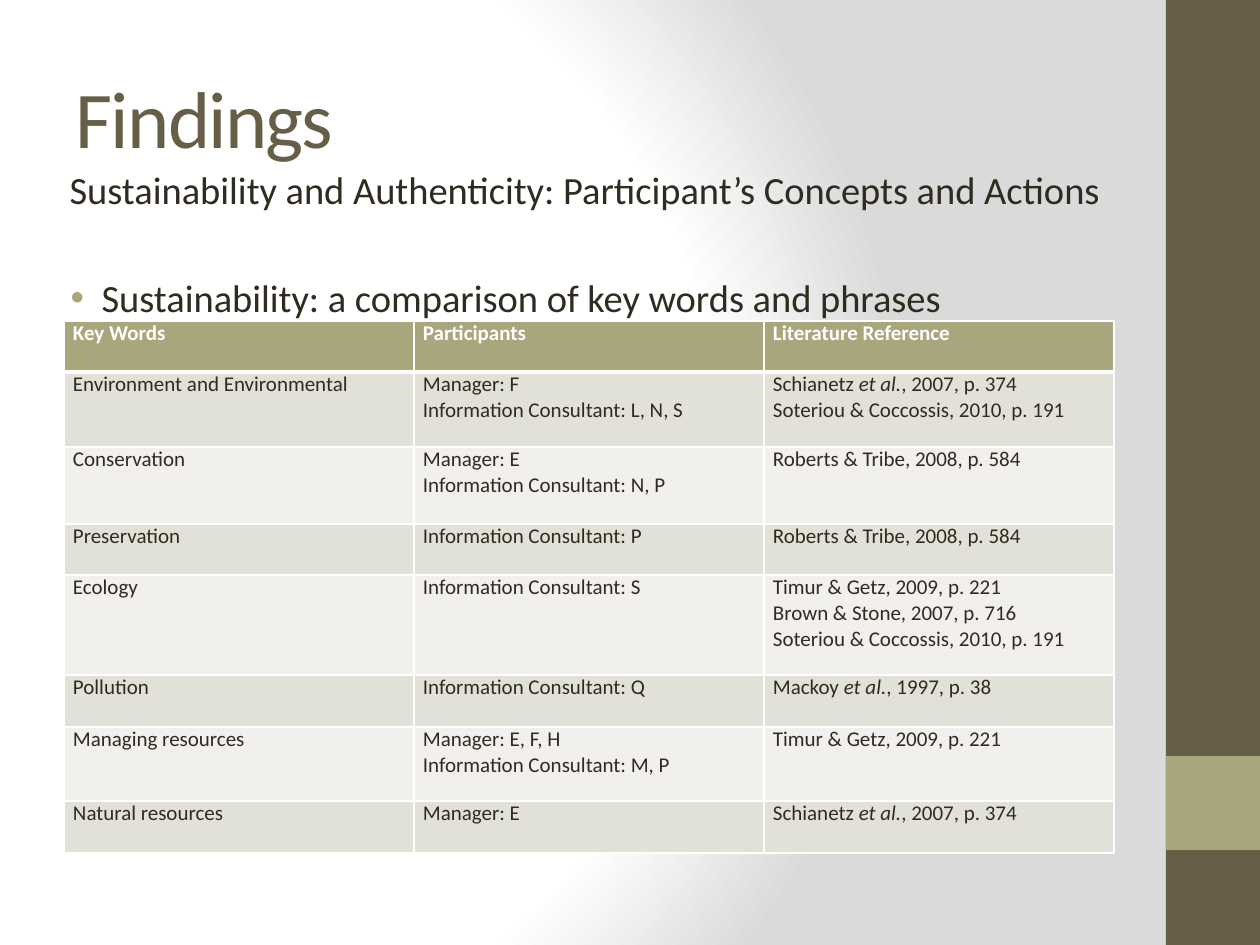
from lxml import etree
from pptx import Presentation
from pptx.dml.color import RGBColor
from pptx.enum import shapes, text
from pptx.oxml import parse_xml
from pptx.oxml.ns import nsdecls
from pptx.util import Pt

PX = 914400 // 126
FONT = "Calibri"
BROWN = RGBColor(0x67, 0x5E, 0x47)
OLIVE = RGBColor(0xA9, 0xA5, 0x7C)
INK = RGBColor(0x2F, 0x2B, 0x20)
WHITE = RGBColor(0xFF, 0xFF, 0xFF)
GREY = RGBColor(0xDA, 0xDA, 0xDA)
BANDS = (RGBColor(0xF1, 0xF0, 0xEC), RGBColor(0xE2, 0xE1, 0xD7))

TITLE = "Findings"
SUBTITLE = "Sustainability and Authenticity: Participant’s Concepts and Actions"
BULLET = "Sustainability: a comparison of key words and phrases"
# Each row: height in px, then the lines of its three cells
ROWS = [
    (51, ["Key Words"], ["Participants"], ["Literature Reference"]),
    (75, ["Environment and Environmental"],
     ["Manager: F", "Information Consultant: L, N, S"],
     ["Schianetz et al., 2007, p. 374", "Soteriou & Coccossis, 2010, p. 191"]),
    (77, ["Conservation"], ["Manager: E", "Information Consultant: N, P"],
     ["Roberts & Tribe, 2008, p. 584"]),
    (51, ["Preservation"], ["Information Consultant: P"],
     ["Roberts & Tribe, 2008, p. 584"]),
    (100, ["Ecology"], ["Information Consultant: S"],
     ["Timur & Getz, 2009, p. 221", "Brown & Stone, 2007, p. 716",
      "Soteriou & Coccossis, 2010, p. 191"]),
    (52, ["Pollution"], ["Information Consultant: Q"],
     ["Mackoy et al., 1997, p. 38"]),
    (74, ["Managing resources"], ["Manager: E, F, H", "Information Consultant: M, P"],
     ["Timur & Getz, 2009, p. 221"]),
    (52, ["Natural resources"], ["Manager: E"],
     ["Schianetz et al., 2007, p. 374"]),
]
BARS = [((1166, 0, 94, 945), BROWN), ((1166, 756, 94, 94), OLIVE)]
TITLE_AT = (63, 38, 1050, 157)
BODY_AT = (42, 160, 1095, 722)
TABLE_AT = (64, 321, 1050, sum(row[0] for row in ROWS))


def scaled(at):
    return [value * PX for value in at]


def place(box, at):
    box.left, box.top, box.width, box.height = scaled(at)


def write(para, words, color, **formats):
    span = para.add_run()
    span.text = words
    span.font.color.rgb = color
    for name, value in {"name": FONT, **formats}.items():
        setattr(span.font, name, value)
    return span


def indent(para, left, first):
    props = para._p.get_or_add_pPr()
    props.set("marL", str(left * PX))
    props.set("indent", str(first * PX))
    return props


def paint_background(page):
    fill = page.background.fill
    fill.gradient()
    grad = page._element.cSld.bg.bgPr.find(".//{*}gradFill")
    stops = "".join(
        f'<a:gs pos="{pos * 1000}"><a:srgbClr val="{color}"/></a:gs>'
        for pos, color in ((0, WHITE), (75, WHITE), (100, GREY)))
    grad.getparent().replace(grad, parse_xml(
        f'<a:gradFill {nsdecls("a")} rotWithShape="1"><a:gsLst>{stops}</a:gsLst>'
        '<a:path path="circle"><a:fillToRect l="20000" t="50000" r="100000" b="50000"/>'
        '</a:path></a:gradFill>'))


def add_borders(cell, bottom):
    props = cell._tc.get_or_add_tcPr()
    for side, points in (("L", 1), ("R", 1), ("T", 1), ("B", bottom)):
        props.append(parse_xml(
            f'<a:ln{side} {nsdecls("a")} w="{Pt(points)}"><a:solidFill>'
            f'<a:srgbClr val="{WHITE}"/></a:solidFill></a:ln{side}>'))


def fill_cell(cell, lines, row, column):
    header = row == 0
    add_borders(cell, 3 if header else 1)
    cell.fill.solid()
    cell.fill.fore_color.rgb = OLIVE if header else BANDS[row % 2]
    cell.margin_left = cell.margin_right = 9 * PX
    cell.margin_top = cell.margin_bottom = 0
    for number, line in enumerate(lines):
        frame = cell.text_frame
        para = frame.add_paragraph() if number else frame.paragraphs[0]
        para.alignment = text.PP_ALIGN.JUSTIFY
        if column == 2 and not header:
            indent(para, 63, -63)
        for part in line.partition("et al."):
            if part:
                write(para, part, WHITE if header else INK, size=Pt(12),
                      bold=header, italic=part == "et al.")


def main():
    deck = Presentation()
    deck.slide_width, deck.slide_height = scaled((1260, 945))
    page = deck.slides.add_slide(deck.slide_layouts[1])
    paint_background(page)

    # Side bars
    for at, color in BARS:
        bar = page.shapes.add_shape(shapes.MSO_SHAPE.RECTANGLE, *scaled(at))
        bar.shadow.inherit = False
        bar.fill.solid()
        bar.fill.fore_color.rgb = color
        bar.line.fill.background()

    # Title
    title = page.shapes.title
    place(title, TITLE_AT)
    title.text_frame.vertical_anchor = text.MSO_ANCHOR.MIDDLE
    title.text_frame.auto_size = text.MSO_AUTO_SIZE.NONE
    para = title.text_frame.paragraphs[0]
    para.alignment = text.PP_ALIGN.LEFT
    span = write(para, TITLE, BROWN, size=Pt(46))
    span.font._element.set("spc", "-100")

    # Subtitle and bullet
    body = page.placeholders[1]
    place(body, BODY_AT)
    frame = body.text_frame
    frame.auto_size = text.MSO_AUTO_SIZE.NONE
    subtitle, bullet = frame.paragraphs[0], frame.add_paragraph()
    subtitle.space_before, bullet.space_before = Pt(0), Pt(35)
    etree.SubElement(indent(subtitle, 15, 0), f"{{{frame._txBody.nsmap['a']}}}buNone")
    props = indent(bullet, 47, -31)
    for mark in (f'<a:buClr {nsdecls("a")}><a:srgbClr val="{OLIVE}"/></a:buClr>',
                 f'<a:buFont {nsdecls("a")} typeface="Arial"/>',
                 f'<a:buChar {nsdecls("a")} char="•"/>'):
        props.append(parse_xml(mark))
    for para, words in ((subtitle, SUBTITLE), (bullet, BULLET)):
        write(para, words, INK, size=Pt(22))

    # Table
    table = page.shapes.add_table(len(ROWS), 3, *scaled(TABLE_AT)).table
    table.horz_banding = False
    for row, (height, *cells) in enumerate(ROWS):
        table.rows[row].height = height * PX
        for column, lines in enumerate(cells):
            fill_cell(table.cell(row, column), lines, row, column)

    deck.save("out.pptx")


if __name__ == "__main__":
    main()
